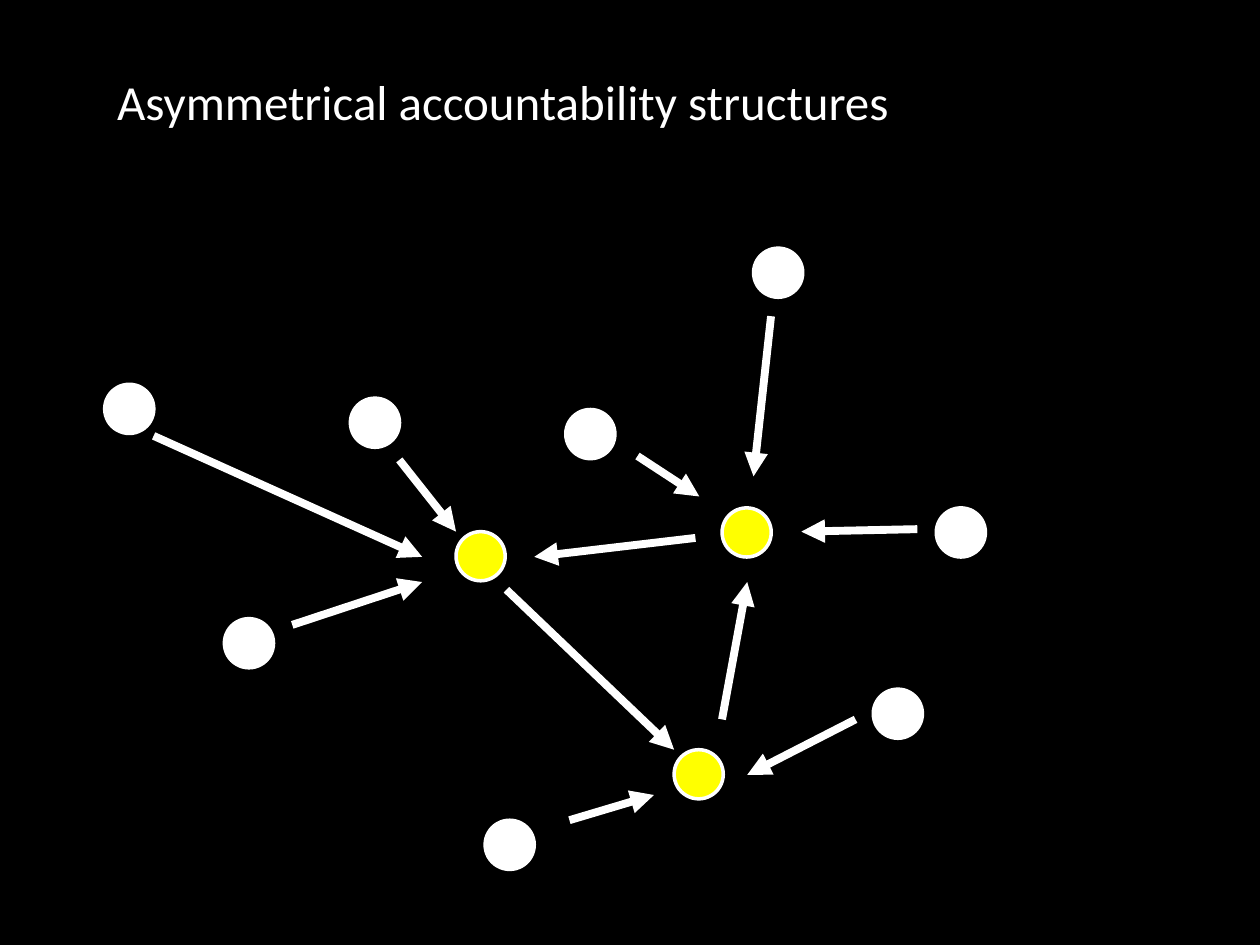
from pptx import Presentation
from pptx.dml.color import RGBColor
from pptx.enum.shapes import MSO_CONNECTOR, MSO_SHAPE
from pptx.enum.text import MSO_AUTO_SIZE
from pptx.oxml.ns import qn
from pptx.util import Pt
from lxml.etree import SubElement

WHITE, YELLOW, BLACK = "FFFFFF", "FFFF00", "000000"

HUBS = [(385.2, 428.4), (260.6, 303.8), (412.6, 290.2)]
NODES = [
    (499, 393.8), (323.3, 234), (200.2, 227.5), (128.2, 353.5),
    (59.8, 219.6), (277.2, 468.7), (535, 290.2), (430.6, 141.8),
]
ARROWS = [
    (228.2, 262.8, 260.6, 303.8),
    (289.4, 337, 385.2, 428.4),
    (87.8, 249.1, 241.2, 318.2),
    (167, 357.1, 241.2, 332.6),
    (488.9, 411.1, 427, 442.8),
    (325.4, 468.7, 373.7, 454.3),
    (412.6, 411.1, 427, 332.6),
    (524.2, 302.4, 457.9, 303.8),
    (364.3, 260.6, 399.6, 283.7),
    (440.6, 180.7, 430.6, 272.2),
    (397.4, 307.4, 305.3, 318.2),
]


def color(code):
    return RGBColor.from_string(code)


class Board:
    font = "Calibri"
    ink = WHITE
    size = 28.1

    def __init__(self, slide):
        self.slide = slide
        fill = slide.background.fill
        fill.solid()
        fill.fore_color.rgb = color(BLACK)

    def title(self, x, y, w, h, text):
        box = self.slide.shapes.add_textbox(Pt(x), Pt(y), Pt(w), Pt(h))
        frame = box.text_frame
        frame.word_wrap = True
        frame.auto_size = MSO_AUTO_SIZE.SHAPE_TO_FIT_TEXT
        frame.text = text
        font = frame.paragraphs[0].runs[0].font
        font.name = self.font
        font.size = Pt(28)
        font.color.rgb = color(self.ink)

    def dot(self, x, y, tint):
        side = Pt(self.size)
        dot = self.slide.shapes.add_shape(MSO_SHAPE.OVAL, Pt(x), Pt(y), side, side)
        dot.shadow.inherit = False
        dot.fill.solid()
        dot.fill.fore_color.rgb = color(tint)
        dot.line.color.rgb = color(self.ink)
        dot.line.width = Pt(2)

    def arrow(self, *ends):
        link = self.slide.shapes.add_connector(
            MSO_CONNECTOR.STRAIGHT, *(Pt(end) for end in ends))
        link.line.color.rgb = color(self.ink)
        link.line.width = Pt(4.5)
        SubElement(link.line._get_or_add_ln(), qn("a:tailEnd"), type="triangle")
        SubElement(link._element.spPr, qn("a:effectLst"))


def main():
    deck = Presentation()
    deck.slide_width, deck.slide_height = Pt(720), Pt(540)
    board = Board(deck.slides.add_slide(deck.slide_layouts[6]))
    for tint, spots in ((WHITE, NODES), (YELLOW, HUBS)):
        for x, y in spots:
            board.dot(x, y, tint)
    for ends in ARROWS:
        board.arrow(*ends)
    board.title(59.8, 37.4, 481.7, 41, "Asymmetrical accountability structures")
    deck.save("out.pptx")


if __name__ == "__main__":
    main()
